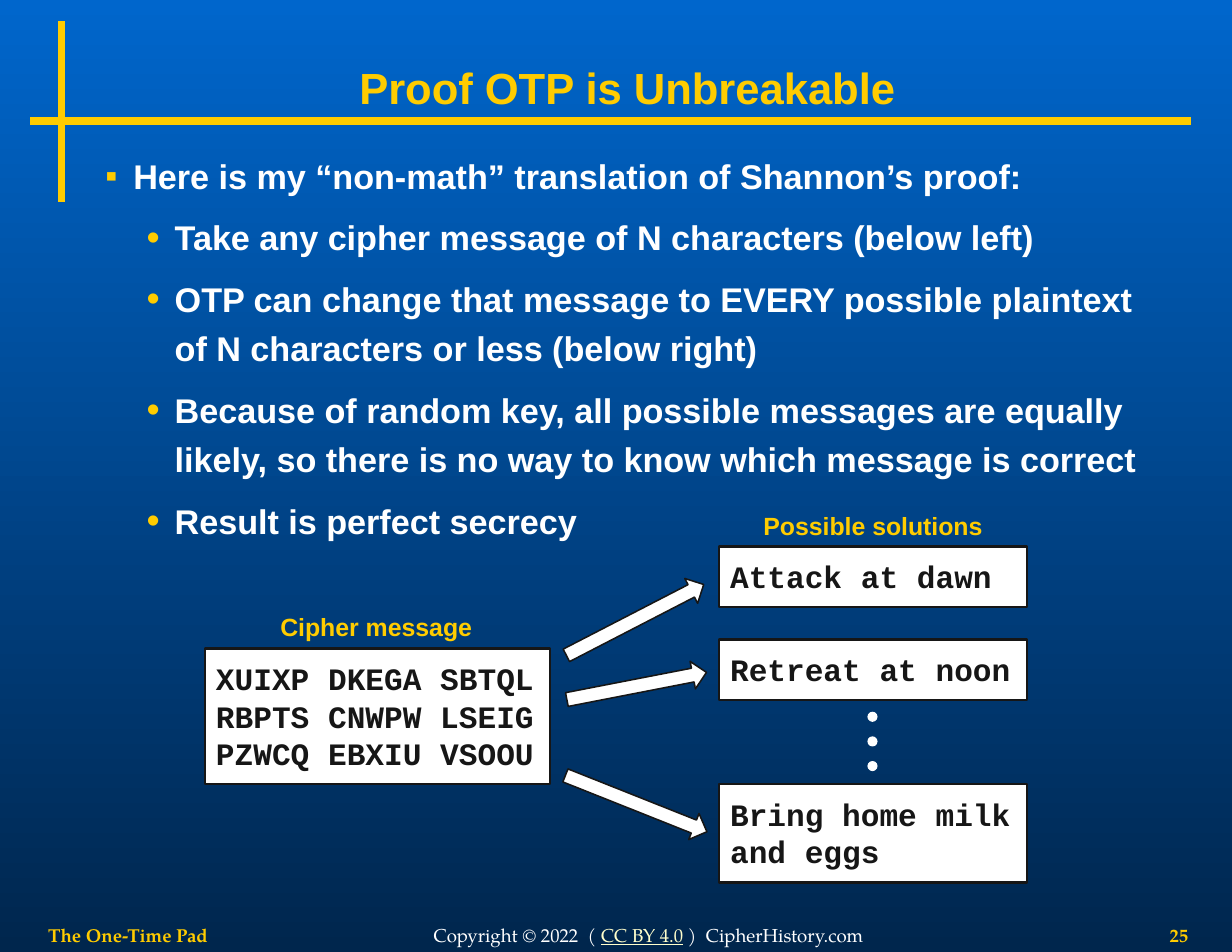
import lxml.etree
import pptx
import pptx.dml.color
import pptx.enum.shapes
import pptx.enum.text
import pptx.oxml.ns
import pptx.util

Inches = pptx.util.Inches
Pt = pptx.util.Pt
RGBColor = pptx.dml.color.RGBColor
ALIGN = pptx.enum.text.PP_ALIGN
ANCHOR = pptx.enum.text.MSO_ANCHOR
SHAPE = pptx.enum.shapes.MSO_SHAPE

GOLD = RGBColor(0xFF, 0xCC, 0x00)
WHITE = RGBColor(0xFF, 0xFF, 0xFF)
CREAM = RGBColor(0xFF, 0xFF, 0xCC)
INK = RGBColor(0x16, 0x16, 0x16)
SKY = RGBColor(0x00, 0x66, 0xCC)
NAVY = RGBColor(0x00, 0x26, 0x4D)

TITLE = {"name": "Arial", "size": Pt(28), "bold": True}
BODY = {"name": "Arial", "size": Pt(22), "bold": True}
LABEL = {"name": "Arial", "size": Pt(16), "bold": True}
CODE = {"name": "Courier New", "size": Pt(20), "bold": True}
FOOTER = {"name": "TeX Gyre Pagella", "size": Pt(12)}

BULLETS = [
    (0, "Here is my “non-math” translation of Shannon’s proof:"),
    (1, "Take any cipher message of N characters (below left)"),
    (1, "OTP can change that message to EVERY possible plaintext of N characters or less (below right)"),
    (1, "Because of random key, all possible messages are equally likely, "
        "so there is no way to know which message is correct"),
    (1, "Result is perfect secrecy"),
]
# level: (symbol, left margin in inches, size in percent)
BULLET_STYLES = {0: ("▪", 0.25, 100), 1: ("•", 0.62, 110)}
MESSAGES = [
    ((1.83, 5.79, 3.08, 1.21), "XUIXP DKEGA SBTQL RBPTS CNWPW LSEIG PZWCQ EBXIU VSOOU"),
    ((6.42, 4.88, 2.75, 0.54), "Attack at dawn"),
    ((6.42, 5.71, 2.75, 0.54), "Retreat at noon"),
    ((6.42, 7, 2.75, 0.88), "Bring home milk and eggs"),
]
ARROWS = [
    ((4.98, 5.41, 1.38, 0.25), -27.3),
    ((5.05, 6, 1.27, 0.25), -11),
    ((5, 7.05, 1.36, 0.25), 21.7),
]


def add_run(para, text, style, color):
    span = para.add_run()
    span.text = text
    for name, value in style.items():
        setattr(span.font, name, value)
    span.font.color.rgb = color


def set_frame(frame, margins, anchor=ANCHOR.TOP):
    """Set wrapping, anchor and the (horizontal, vertical) margins."""
    across, down = map(Inches, margins)
    values = {"word_wrap": True, "auto_size": pptx.enum.text.MSO_AUTO_SIZE.NONE,
              "vertical_anchor": anchor, "margin_left": across, "margin_right": across,
              "margin_top": down, "margin_bottom": down}
    for name, value in values.items():
        setattr(frame, name, value)


def place(shape, bounds):
    for name, value in zip(("left", "top", "width", "height"), bounds):
        setattr(shape, name, Inches(value))


def add_text(page, bounds, spans, margins, align, anchor=ANCHOR.TOP):
    box = page.shapes.add_textbox(*map(Inches, bounds))
    set_frame(box.text_frame, margins, anchor)
    para = box.text_frame.paragraphs[0]
    para.alignment = align
    for span in spans:
        add_run(para, *span)
    return para


def add_filled(page, kind, bounds, line_color, line_width):
    shape = page.shapes.add_shape(kind, *map(Inches, bounds))
    shape.shadow.inherit = False
    shape.fill.solid()
    shape.fill.fore_color.rgb = WHITE
    shape.line.color.rgb = line_color
    shape.line.width = Pt(line_width)
    return shape


def add_message(page, bounds, text):
    box = add_filled(page, SHAPE.RECTANGLE, bounds, INK, 1.5)
    set_frame(box.text_frame, (0.1, 0.1))
    para = box.text_frame.paragraphs[0]
    para.alignment = ALIGN.LEFT
    add_run(para, text, CODE, INK)


def add_rule(page, start, end):
    rule = page.shapes.add_connector(
        pptx.enum.shapes.MSO_CONNECTOR.STRAIGHT, *map(Inches, start + end))
    rule.line.color.rgb = GOLD
    rule.line.width = Pt(5)
    lxml.etree.SubElement(rule._element.spPr, pptx.oxml.ns.qn("a:effectLst"))


def set_indent(para, margin, first):
    props = para._p.get_or_add_pPr()
    props.set("marL", str(Inches(margin)))
    props.set("indent", str(Inches(first)))
    return props


def set_bullet(para, symbol, margin, percent):
    props = set_indent(para, margin, -0.25)
    qn = pptx.oxml.ns.qn
    color = lxml.etree.SubElement(props, qn("a:buClr"))
    lxml.etree.SubElement(color, qn("a:srgbClr"), val=str(GOLD))
    lxml.etree.SubElement(props, qn("a:buSzPct"), val=str(percent * 1000))
    lxml.etree.SubElement(props, qn("a:buFont"), typeface="Arial")
    lxml.etree.SubElement(props, qn("a:buChar"), char=symbol)


def fill_title(title):
    place(title, (0.55, 0.48, 10.1, 0.6))
    set_frame(title.text_frame, (0.11, 0.05), ANCHOR.MIDDLE)
    para = title.text_frame.paragraphs[0]
    para.alignment = ALIGN.CENTER
    add_run(para, "Proof OTP is Unbreakable", TITLE, GOLD)


def fill_body(body):
    place(body, (0.83, 1.25, 9.75, 3.61))
    frame = body.text_frame
    set_frame(frame, (0.11, 0.06))
    for index, (level, text) in enumerate(BULLETS):
        para = frame.add_paragraph() if index else frame.paragraphs[0]
        para.level = level
        set_bullet(para, *BULLET_STYLES[level])
        para.line_spacing = 1.2
        para.space_before = Pt(8 if index else 0)
        add_run(para, text, BODY, WHITE)


def add_frame_and_footer(page):
    add_rule(page, (0.27, 1.08), (10.63, 1.08))
    add_rule(page, (0.55, 1.8), (0.55, 0.19))
    bold = FOOTER | {"bold": True}
    add_text(page, (0.43, 8.22, 1.65, 0.25), [("The One-Time Pad", bold, GOLD)],
             (0, 0), ALIGN.LEFT, ANCHOR.MIDDLE)
    add_text(page, (9.75, 8.22, 0.86, 0.25), [("25", bold, GOLD)],
             (0, 0), ALIGN.RIGHT, ANCHOR.MIDDLE)
    spans = [("Copyright © 2022  ( ", FOOTER, WHITE),
             ("CC BY 4.0", FOOTER | {"underline": True}, CREAM),
             (" )  CipherHistory.com", FOOTER, WHITE)]
    notice = add_text(page, (3.75, 8.22, 4.08, 0.25), spans,
                      (0.1, 0.05), ALIGN.CENTER, ANCHOR.MIDDLE)
    set_indent(notice, 0.42, -0.42)


def paint_background(page):
    fill = page.background.fill
    fill.gradient()
    fill.gradient_angle = 270
    for stop, color, position in zip(fill.gradient_stops, (SKY, NAVY), (0, 1)):
        stop.color.rgb = color
        stop.position = position


def main():
    deck = pptx.Presentation()
    deck.slide_width, deck.slide_height = Inches(11), Inches(8.5)
    page = deck.slides.add_slide(deck.slide_layouts[1])
    paint_background(page)
    add_frame_and_footer(page)
    fill_title(page.shapes.title)
    fill_body(page.placeholders[1])
    for bounds, text in MESSAGES:
        add_message(page, bounds, text)
    for bounds, angle in ARROWS:
        arrow = add_filled(page, SHAPE.RIGHT_ARROW, bounds, INK, 1)
        arrow.rotation = angle
    for index in range(3):
        add_filled(page, SHAPE.OVAL, (7.75, 6.36 + 0.22 * index, 0.08, 0.08), WHITE, 0.75)
    for bounds, text in [((1.83, 5.4, 3.06, 0.38), "Cipher message"),
                         ((6.42, 4.5, 2.75, 0.38), "Possible solutions")]:
        add_text(page, bounds, [(text, LABEL, GOLD)], (0.11, 0.06), ALIGN.CENTER)
    deck.save("out.pptx")


if __name__ == "__main__":
    main()
